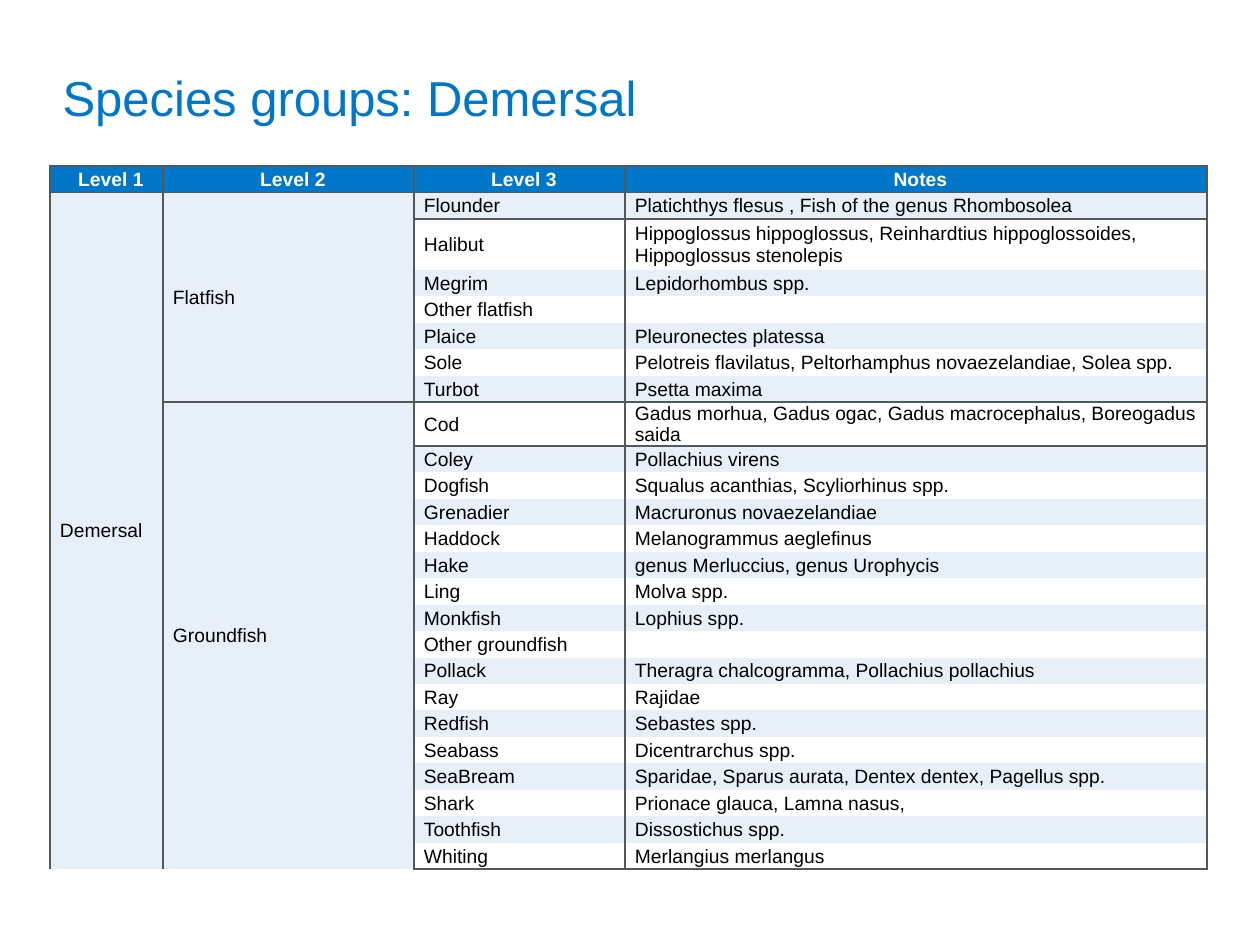
"""Build a slide with a table of demersal species groups."""

from dataclasses import dataclass

from lxml.etree import SubElement
from pptx import Presentation
from pptx.dml.color import RGBColor
from pptx.enum.text import MSO_ANCHOR, PP_ALIGN
from pptx.oxml.ns import qn
from pptx.slide import Slide
from pptx.table import Table, _Cell
from pptx.text.text import _Paragraph
from pptx.util import Emu, Pt

BLUE = RGBColor(0x00, 0x77, 0xC8)
BAND = RGBColor(0xE7, 0xF0, 0xF9)
GREY = RGBColor(0x54, 0x58, 0x5A)
WHITE = RGBColor(0xFF, 0xFF, 0xFF)
BLACK = RGBColor(0x00, 0x00, 0x00)
FONT = "Arial"
CELL_SIZE = Pt(11)
EMU_PER_PX = 914400 / 126
NO_STYLE = "{2D5ABB26-0587-4C30-8999-92F81FD0307C}"

TABLE_LEFT, TABLE_TOP, TABLE_HEIGHT = 50, 166, 704
COLUMN_WIDTHS = (113, 251, 211, 582)
TALL_ROWS = {"Halibut": 51, "Cod": 44}
HEADERS = ("Level 1", "Level 2", "Level 3", "Notes")


@dataclass(frozen=True)
class Species:
    """A species and its scientific names."""

    name: str
    notes: str = ""


@dataclass(frozen=True)
class Group:
    """A level 2 group of species."""

    name: str
    species: tuple[Species, ...]


GROUPS = (
    Group("Flatfish", (
        Species("Flounder", "Platichthys flesus , Fish of the genus Rhombosolea"),
        Species("Halibut", "Hippoglossus hippoglossus, Reinhardtius hippoglossoides, "
                           "Hippoglossus stenolepis"),
        Species("Megrim", "Lepidorhombus spp."),
        Species("Other flatfish"),
        Species("Plaice", "Pleuronectes platessa"),
        Species("Sole", "Pelotreis flavilatus, Peltorhamphus novaezelandiae, Solea spp."),
        Species("Turbot", "Psetta maxima"),
    )),
    Group("Groundfish", (
        Species("Cod", "Gadus morhua, Gadus ogac, Gadus macrocephalus, Boreogadus saida"),
        Species("Coley", "Pollachius virens"),
        Species("Dogfish", "Squalus acanthias, Scyliorhinus spp."),
        Species("Grenadier", "Macruronus novaezelandiae"),
        Species("Haddock", "Melanogrammus aeglefinus"),
        Species("Hake", "genus Merluccius, genus Urophycis"),
        Species("Ling", "Molva spp."),
        Species("Monkfish", "Lophius spp."),
        Species("Other groundfish"),
        Species("Pollack", "Theragra chalcogramma, Pollachius pollachius"),
        Species("Ray", "Rajidae"),
        Species("Redfish", "Sebastes spp."),
        Species("Seabass", "Dicentrarchus spp."),
        Species("SeaBream", "Sparidae, Sparus aurata, Dentex dentex, Pagellus spp."),
        Species("Shark", "Prionace glauca, Lamna nasus,"),
        Species("Toothfish", "Dissostichus spp."),
        Species("Whiting", "Merlangius merlangus"),
    )),
)


def px(length: float) -> Emu:
    """Turn pixels into EMU."""
    return Emu(round(length * EMU_PER_PX))


def set_font(paragraph: _Paragraph, size: Pt, color: RGBColor, bold: bool = False) -> None:
    """Set the font of a whole paragraph."""
    paragraph.font.name = FONT
    paragraph.font.size = size
    paragraph.font.bold = bold
    paragraph.font.color.rgb = color


def add_borders(cell: _Cell, sides: str) -> None:
    """Draw grey lines on the given sides, in the order LRTB."""
    properties = cell._tc.get_or_add_tcPr()
    for side in sides:
        line = SubElement(properties, qn(f"a:ln{side}"), w=str(Pt(1)))
        fill = SubElement(line, qn("a:solidFill"))
        SubElement(fill, qn("a:srgbClr"), val=str(GREY))


def fill_cell(cell: _Cell, text: str, fill: RGBColor, sides: str, header: bool = False) -> None:
    """Write and format one table cell."""
    cell.text = text
    cell.vertical_anchor = MSO_ANCHOR.MIDDLE
    cell.margin_left, cell.margin_top = px(10), px(1)
    cell.margin_right, cell.margin_bottom = px(1), px(0)
    add_borders(cell, sides)
    cell.fill.solid()
    cell.fill.fore_color.rgb = fill
    paragraph = cell.text_frame.paragraphs[0]
    paragraph.alignment = PP_ALIGN.CENTER if header else PP_ALIGN.LEFT
    set_font(paragraph, CELL_SIZE, WHITE if header else BLACK, header)
    if not text:
        SubElement(paragraph._p, qn("a:endParaRPr"), sz=str(int(CELL_SIZE.pt * 100)))


def edge_sides(row: int, first: int, last: int) -> str:
    """Name the bordered sides of a cell in a block of rows."""
    return "LR" + "T" * (row == first) + "B" * (row == last)


def add_group(table: Table, group: Group, first: int, final: int) -> int:
    """Fill the rows of one group and return the next free row."""
    last = first + len(group.species) - 1
    for row, species in enumerate(group.species, first):
        band = BAND if row % 2 else WHITE
        group_sides = edge_sides(row, first, last)
        fill_cell(table.cell(row, 0), "Demersal" if row == 1 else "", BAND,
                  edge_sides(row, 1, final))
        fill_cell(table.cell(row, 1), group.name if row == first else "", BAND, group_sides)
        fill_cell(table.cell(row, 2), species.name, band, group_sides)
        fill_cell(table.cell(row, 3), species.notes, band, group_sides)
        if species.name in TALL_ROWS:
            table.rows[row].height = px(TALL_ROWS[species.name])
    table.cell(first, 1).merge(table.cell(last, 1))
    return last + 1


def add_species_table(slide: Slide) -> None:
    """Add the table with its header and merged groups."""
    species_count = sum(len(group.species) for group in GROUPS)
    table = slide.shapes.add_table(
        species_count + 1, len(HEADERS), px(TABLE_LEFT), px(TABLE_TOP),
        px(sum(COLUMN_WIDTHS)), px(TABLE_HEIGHT)).table
    table.horz_banding = False
    table._tbl.tblPr.find(qn("a:tableStyleId")).text = NO_STYLE
    for column, width in zip(table.columns, COLUMN_WIDTHS):
        column.width = px(width)
    plain_count = species_count + 1 - len(TALL_ROWS)
    for row in table.rows:
        row.height = px((TABLE_HEIGHT - sum(TALL_ROWS.values())) / plain_count)
    for column, header in enumerate(HEADERS):
        fill_cell(table.cell(0, column), header, BLUE, "LRTB", header=True)
    first = 1
    for group in GROUPS:
        first = add_group(table, group, first, species_count)
    table.cell(1, 0).merge(table.cell(species_count, 0))


def add_title(slide: Slide) -> None:
    """Place and format the title."""
    title = slide.shapes.title
    title.left, title.top, title.width, title.height = px(50), px(38), px(1155), px(118)
    title.text_frame.text = "Species groups: Demersal"
    title.text_frame.vertical_anchor = MSO_ANCHOR.MIDDLE
    paragraph = title.text_frame.paragraphs[0]
    paragraph.alignment = PP_ALIGN.LEFT
    set_font(paragraph, Pt(28), BLUE)


def main() -> None:
    """Create and save the presentation."""
    presentation = Presentation()
    presentation.slide_width, presentation.slide_height = px(1260), px(945)
    slide = presentation.slides.add_slide(presentation.slide_layouts[5])
    add_title(slide)
    add_species_table(slide)
    presentation.save("out.pptx")


if __name__ == "__main__":
    main()
